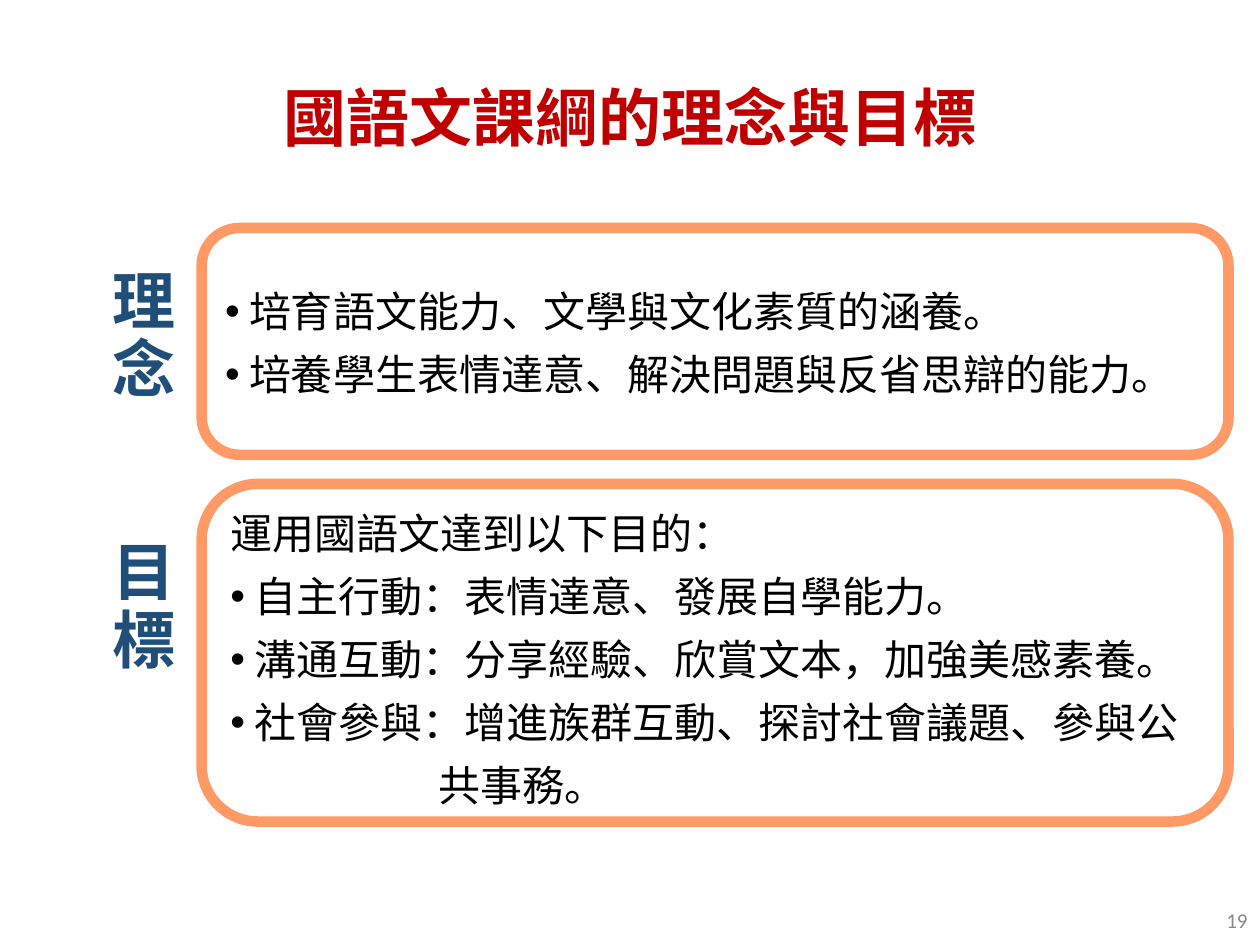
from dataclasses import dataclass

from lxml import etree
from pptx import Presentation
from pptx.dml.color import RGBColor
from pptx.enum import shapes, text
from pptx.oxml import ns
from pptx.util import Inches, Pt


@dataclass(frozen=True)
class Theme:
    """Colours, fonts and type sizes of the slide."""
    title: str = "C00000"
    label: str = "1F4E79"
    body: str = "000000"
    number: str = "898989"
    panel: str = "FFFFFF"
    border: str = "FF9966"
    cjk: str = "Noto Sans CJK SC"
    latin: str = "Calibri"
    heading_size: int = 36
    body_size: int = 24
    number_size: int = 12


THEME = Theme()
HANGING = 0.19
CONTINUATION = 1.65


def write(paragraph, words, *, size, color, font=THEME.cjk, bold=False,
          align=text.PP_ALIGN.LEFT, line=None, before=None, bullet=False, indent=0):
    """Write one formatted paragraph, with an optional hanging bullet or left indent."""
    paragraph.alignment = align
    if line is not None:
        paragraph.line_spacing = line
    if before is not None:
        paragraph.space_before = before
    properties = paragraph._p.get_or_add_pPr()
    properties.set("marL", str(Inches(HANGING if bullet else indent)))
    properties.set("indent", str(Inches(-HANGING if bullet else 0)))
    if bullet:
        etree.SubElement(properties, ns.qn("a:buFont"), typeface="Arial")
        etree.SubElement(properties, ns.qn("a:buChar"), char="•")
    run = paragraph.add_run()
    run.text = words
    run.font.name = font
    run.font.size = Pt(size)
    run.font.bold = bold
    run.font.color.rgb = RGBColor.from_string(color)
    etree.SubElement(run._r.get_or_add_rPr(), ns.qn("a:ea"), typeface=font)


def add_caption(slide, box, words, side=0.1, **style):
    """Place a single paragraph, centred vertically in its box."""
    frame = slide.shapes.add_textbox(*map(Inches, box)).text_frame
    frame.word_wrap = True
    frame.vertical_anchor = text.MSO_ANCHOR.MIDDLE
    frame.margin_left = frame.margin_right = Inches(side)
    write(frame.paragraphs[0], words, **style)


def add_panel(slide, box, lines, top_inset=0.05):
    """Place a rounded panel holding (words, bullet, indent) lines."""
    panel = slide.shapes.add_shape(
        shapes.MSO_SHAPE.FLOWCHART_ALTERNATE_PROCESS, *map(Inches, box))
    panel.shadow.inherit = False
    panel.fill.solid()
    panel.fill.fore_color.rgb = RGBColor.from_string(THEME.panel)
    panel.line.color.rgb = RGBColor.from_string(THEME.border)
    panel.line.width = Pt(6)
    frame = panel.text_frame
    frame.word_wrap = True
    frame.vertical_anchor = text.MSO_ANCHOR.MIDDLE
    frame.margin_top = Inches(top_inset)
    for index, (words, bullet, indent) in enumerate(lines):
        paragraph = frame.add_paragraph() if index else frame.paragraphs[0]
        write(paragraph, words, size=THEME.body_size, color=THEME.body, line=Pt(30),
              before=Pt(6) if index else None, bullet=bullet, indent=indent)


def add_section(slide, label, label_top, panel_box, lines, **panel_style):
    """Place a panel with its stacked label on the left."""
    add_panel(slide, panel_box, lines, **panel_style)
    add_caption(slide, (0.69, label_top, 0.91, 1.43), label, side=0.15,
                size=THEME.heading_size, color=THEME.label, bold=True,
                align=text.PP_ALIGN.CENTER, line=0.9)


def main():
    """Build and save the slide."""
    deck = Presentation()
    deck.slide_width, deck.slide_height = Inches(10), Inches(7.5)
    slide = deck.slides.add_slide(deck.slide_layouts[6])
    add_caption(slide, (0.69, 0.2, 8.62, 1.45), "國語文課綱的理念與目標",
                size=THEME.heading_size, color=THEME.title, bold=True,
                align=text.PP_ALIGN.CENTER)
    add_section(slide, "理念", 1.97, (1.6, 1.81, 8.15, 1.8), [
        ("培育語文能力、文學與文化素質的涵養。", True, 0),
        ("培養學生表情達意、解決問題與反省思辯的能力。", True, 0),
    ])
    add_section(slide, "目標", 4.12, (1.6, 3.84, 8.15, 2.68), [
        ("運用國語文達到以下目的：", False, 0),
        ("自主行動：表情達意、發展自學能力。", True, 0),
        ("溝通互動：分享經驗、欣賞文本，加強美感素養。", True, 0),
        ("社會參與：增進族群互動、探討社會議題、參與公", True, 0),
        ("共事務。", False, CONTINUATION),
    ], top_inset=0.13)
    add_caption(slide, (7.75, 7.1, 2.25, 0.4), "19", size=THEME.number_size,
                color=THEME.number, font=THEME.latin, align=text.PP_ALIGN.RIGHT)
    deck.save("out.pptx")


if __name__ == "__main__":
    main()
